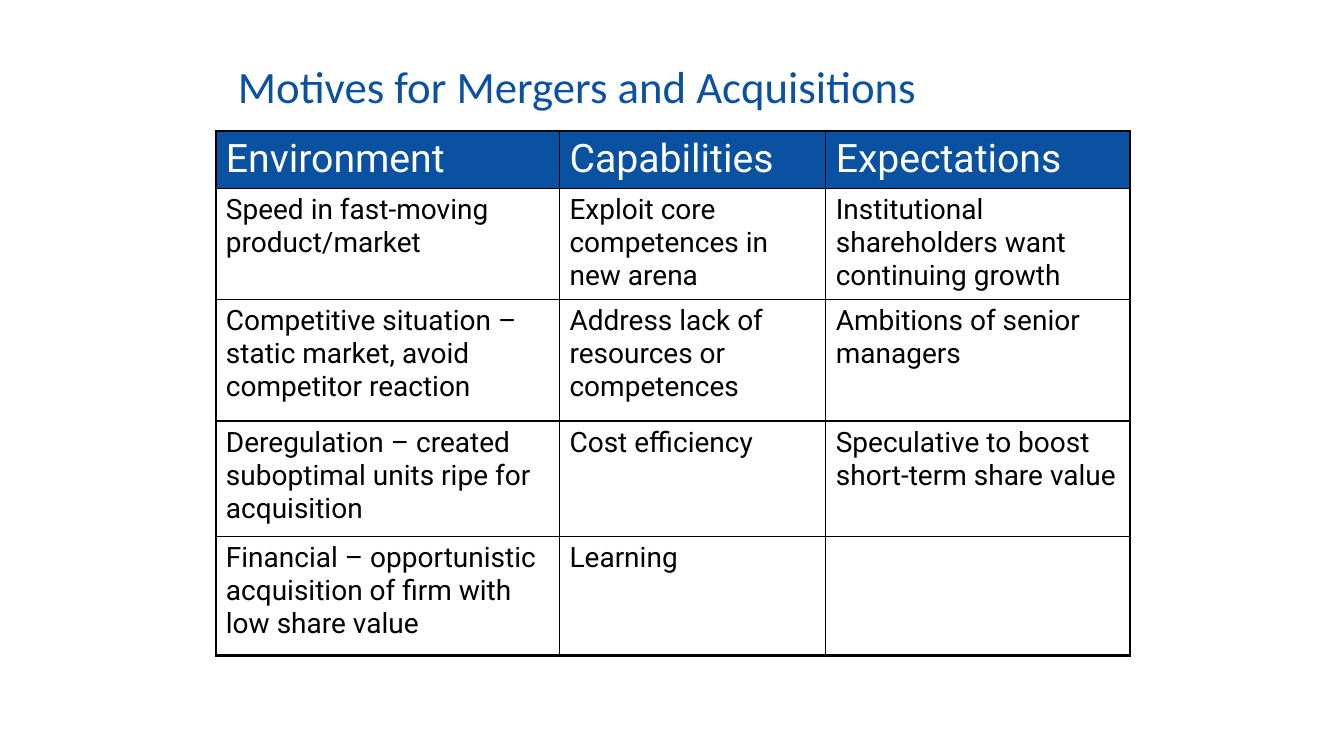
"""Build a slide with a table of motives for mergers and acquisitions."""
from lxml.etree import SubElement
from pptx import Presentation
from pptx.dml.color import RGBColor as RGB
from pptx.enum.text import MSO_ANCHOR as ANCHOR, MSO_AUTO_SIZE as AUTOSIZE, PP_ALIGN as ALIGN
from pptx.oxml.ns import qn
from pptx.util import Cm, Pt

TITLE = "Motives for Mergers and Acquisitions"
ROWS = [
    ("Environment", "Capabilities", "Expectations"),
    ("Speed in fast-moving product/market",
     "Exploit core competences in new arena",
     "Institutional shareholders want continuing growth"),
    ("Competitive situation – static market, avoid competitor reaction",
     "Address lack of resources or competences",
     "Ambitions of senior managers"),
    ("Deregulation – created suboptimal units ripe for acquisition",
     "Cost efficiency",
     "Speculative to boost short-term share value"),
    ("Financial – opportunistic acquisition of firm with low share value",
     "Learning",
     ""),
]
COLORS = {"blue": "0B51A1", "white": "FFFFFF", "black": "000000"}
TITLE_BOX = {"left": 5.74, "top": 1.35, "width": 22.86, "height": 1.8}
TABLE_LEFT, TABLE_TOP = 5.44, 3.3
COL_WIDTHS = (8.66, 6.71, 7.67)
ROW_HEIGHTS = (1.45, 2.79, 3.07, 2.9, 3)
OUTER, INNER = 2.25, 1
TITLE_FONT = {"name": "Calibri", "size": Pt(32), "bold": False}
HEAD_FONT = {"name": "Roboto", "size": Pt(28), "bold": False}
BODY_FONT = {"name": "Roboto", "size": Pt(20), "bold": False}


def set_attrs(obj, values):
    for name, value in values.items():
        setattr(obj, name, value)


def set_font(font, values, color):
    set_attrs(font, values)
    font.color.rgb = RGB.from_string(COLORS[color])


def set_borders(cell, edges):
    tcPr = cell._tc.get_or_add_tcPr()
    for side, is_outer in edges.items():
        width = Pt(OUTER if is_outer else INNER)
        ln = SubElement(tcPr, qn(f"a:ln{side}"), w=str(width))
        fill = SubElement(ln, qn("a:solidFill"))
        SubElement(fill, qn("a:srgbClr"), val=COLORS["black"])


def add_title(slide):
    sp = slide.shapes.title
    set_attrs(sp, {name: Cm(value) for name, value in TITLE_BOX.items()})
    tf = sp.text_frame
    tf.text = TITLE
    set_attrs(tf, {"vertical_anchor": ANCHOR.MIDDLE, "word_wrap": True,
                   "auto_size": AUTOSIZE.NONE})
    p = tf.paragraphs[0]
    set_attrs(p, {"alignment": ALIGN.LEFT, "line_spacing": 0.9})
    set_font(p.runs[0].font, TITLE_FONT, "blue")


def add_motives(slide):
    n_rows, n_cols = len(ROWS), len(COL_WIDTHS)
    table = slide.shapes.add_table(
        n_rows, n_cols, Cm(TABLE_LEFT), Cm(TABLE_TOP),
        Cm(sum(COL_WIDTHS)), Cm(sum(ROW_HEIGHTS))).table
    set_attrs(table, {"first_row": False, "horz_banding": False})
    for col, width in zip(table.columns, COL_WIDTHS):
        col.width = Cm(width)
    for row, height in zip(table.rows, ROW_HEIGHTS):
        row.height = Cm(height)
    for i, texts in enumerate(ROWS):
        for j, text in enumerate(texts):
            cell = table.cell(i, j)
            set_borders(cell, {"L": j == 0, "R": j == n_cols - 1,
                               "T": i == 0, "B": i == n_rows - 1})
            if i == 0:
                cell.fill.solid()
                cell.fill.fore_color.rgb = RGB.from_string(COLORS["blue"])
            else:
                cell.fill.background()
            if text:
                cell.text = text
                r = cell.text_frame.paragraphs[0].runs[0]
                set_font(r.font, BODY_FONT if i else HEAD_FONT, "black" if i else "white")


def main():
    prs = Presentation()
    set_attrs(prs, {"slide_width": Cm(33.87), "slide_height": Cm(19.05)})
    slide = prs.slides.add_slide(prs.slide_layouts.get_by_name("Title Only"))
    add_title(slide)
    add_motives(slide)
    prs.save("out.pptx")


if __name__ == "__main__":
    main()
